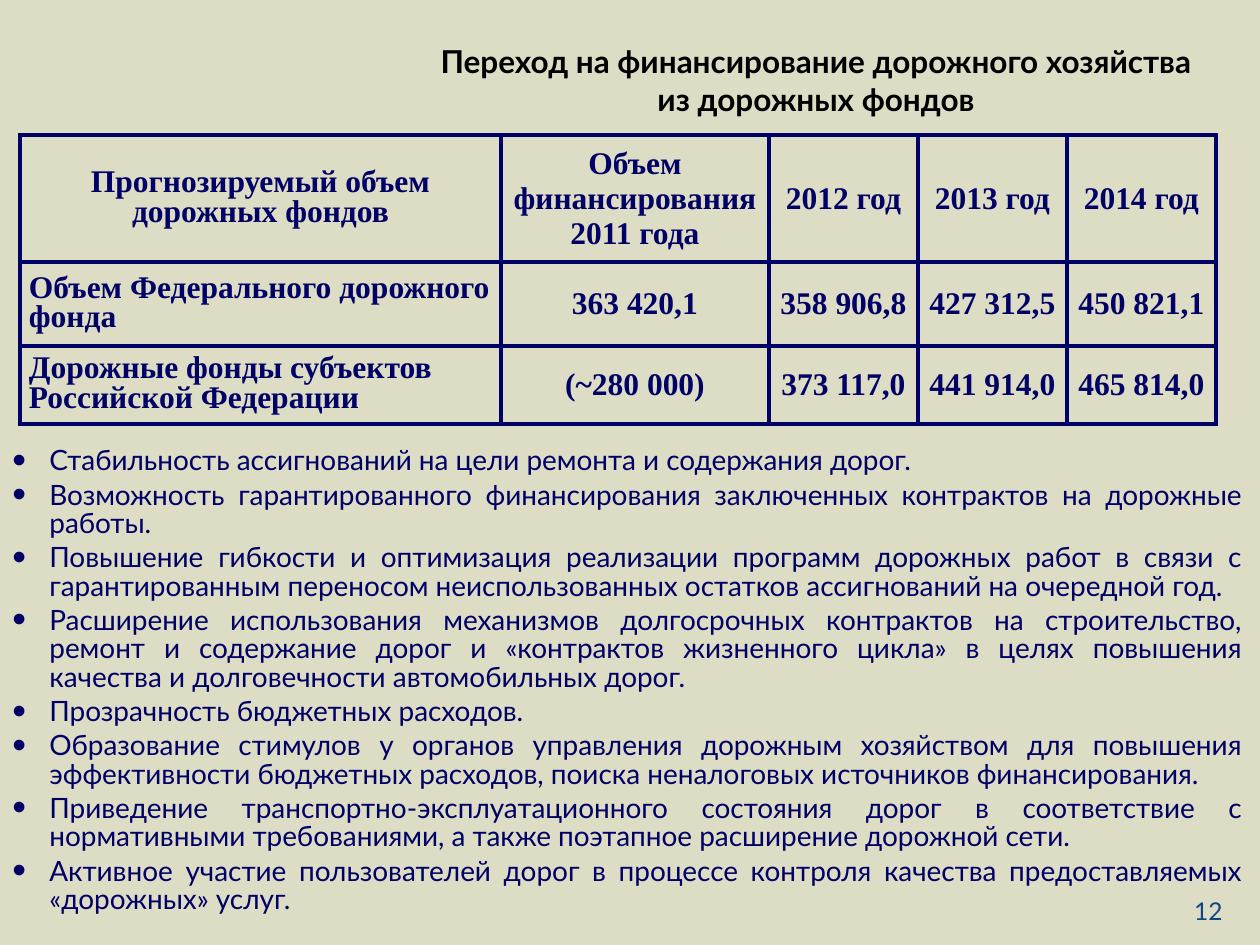
from lxml import etree
from pptx import Presentation
from pptx.dml.color import RGBColor
from pptx.enum.text import MSO_ANCHOR, MSO_AUTO_SIZE, PP_ALIGN
from pptx.oxml.ns import qn
from pptx.util import Emu, Pt

TOP, MID = MSO_ANCHOR.TOP, MSO_ANCHOR.MIDDLE
NONE = MSO_AUTO_SIZE.NONE
LEFT, MIDDLE, RIGHT, FULL = PP_ALIGN.LEFT, PP_ALIGN.CENTER, PP_ALIGN.RIGHT, PP_ALIGN.JUSTIFY
COLORS = {"back": "DDDCC5", "navy": "000066", "blue": "104685", "black": "000000"}
SANS, SERIF = "Lato", "Times New Roman"


def px(n):
    return Emu(n * 914400 // 126)


def style(para, face, size, color, align, bold=False):
    para.alignment = align
    font = para.font
    font.name, font.size, font.bold = face, Pt(size), bold
    font.color.rgb = RGBColor.from_string(COLORS[color])


deck = Presentation()
deck.slide_width, deck.slide_height = px(1260), px(945)
slide = deck.slides.add_slide(deck.slide_layouts[5])
slide.background.fill.solid()
slide.background.fill.fore_color.rgb = RGBColor.from_string(COLORS["back"])

title = slide.shapes.title
title.left, title.top, title.width, title.height = px(413), px(36), px(806), px(78)
frame = title.text_frame
frame.text = "Переход на финансирование дорожного хозяйства из дорожных фондов"
frame.word_wrap, frame.auto_size, frame.vertical_anchor = True, NONE, TOP
style(frame.paragraphs[0], SANS, 18, "black", MIDDLE, True)

points = [
    "Стабильность ассигнований на цели ремонта и содержания дорог.",
    "Возможность гарантированного финансирования заключенных контрактов на дорожные работы.",
    "Повышение гибкости и оптимизация реализации программ дорожных работ в связи с "
    "гарантированным переносом неиспользованных остатков ассигнований на очередной год.",
    "Расширение использования механизмов долгосрочных контрактов на строительство, ремонт и "
    "содержание дорог и «контрактов жизненного цикла» в целях повышения качества и "
    "долговечности автомобильных дорог.",
    "Прозрачность бюджетных расходов.",
    "Образование стимулов у органов управления дорожным хозяйством для повышения "
    "эффективности бюджетных расходов, поиска неналоговых источников финансирования.",
    "Приведение транспортно-эксплуатационного состояния дорог в соответствие с "
    "нормативными требованиями, а также поэтапное расширение дорожной сети.",
    "Активное участие пользователей дорог в процессе контроля качества предоставляемых "
    "«дорожных» услуг.",
]
frame = slide.shapes.add_textbox(px(0), px(442), px(1255), px(493)).text_frame
frame.word_wrap = True
for i, text in enumerate(points):
    para = frame.add_paragraph() if i else frame.paragraphs[0]
    para.text = text
    props = para._p.get_or_add_pPr()
    props.set("marL", str(px(37)))
    props.set("indent", str(-px(37)))
    etree.SubElement(props, qn("a:buSzPct"), val="140000")
    etree.SubElement(props, qn("a:buFont"), typeface="Arial")
    etree.SubElement(props, qn("a:buChar"), char="•")
    para.line_spacing = 0.85
    if i:
        para.space_before = Pt(3.2)
    style(para, SANS, 16, "navy", FULL)

rows = [
    ["Прогнозируемый объем дорожных фондов", "Объем финансирования 2011 года",
     "2012 год", "2013 год", "2014 год"],
    ["Объем Федерального дорожного фонда", "363 420,1", "358 906,8", "427 312,5", "450 821,1"],
    ["Дорожные фонды субъектов Российской Федерации", "(~280 000)",
     "373 117,0", "441 914,0", "465 814,0"],
]
widths, heights = [481, 268, 149, 149, 149], [127, 84, 78]
table = slide.shapes.add_table(3, 5, px(20), px(135), px(sum(widths)), px(sum(heights))).table
table.first_row = table.horz_banding = False
for col, width in zip(table.columns, widths):
    col.width = px(width)
for r, row in enumerate(rows):
    table.rows[r].height = px(heights[r])
    for c, text in enumerate(row):
        cell = table.cell(r, c)
        cell.text = text
        cell.vertical_anchor = MID
        cell.margin_left = cell.margin_right = px(9)
        cell.margin_top = cell.margin_bottom = px(6)
        props = cell._tc.get_or_add_tcPr()
        for side in ("lnL", "lnR", "lnT", "lnB"):
            line = etree.SubElement(props, qn("a:" + side), w=str(Pt(2.25)))
            fill = etree.SubElement(line, qn("a:solidFill"))
            etree.SubElement(fill, qn("a:srgbClr"), val=COLORS["navy"])
        cell.fill.background()
        para = cell.text_frame.paragraphs[0]
        if c == 0:
            para.line_spacing = 0.85
        style(para, SERIF, 18, "navy", LEFT if r and c == 0 else MIDDLE, True)

frame = slide.shapes.add_textbox(px(941), px(890), px(294), px(49)).text_frame
frame.word_wrap = True
frame.text = "12"
style(frame.paragraphs[0], SANS, 14, "blue", RIGHT)

deck.save("out.pptx")
